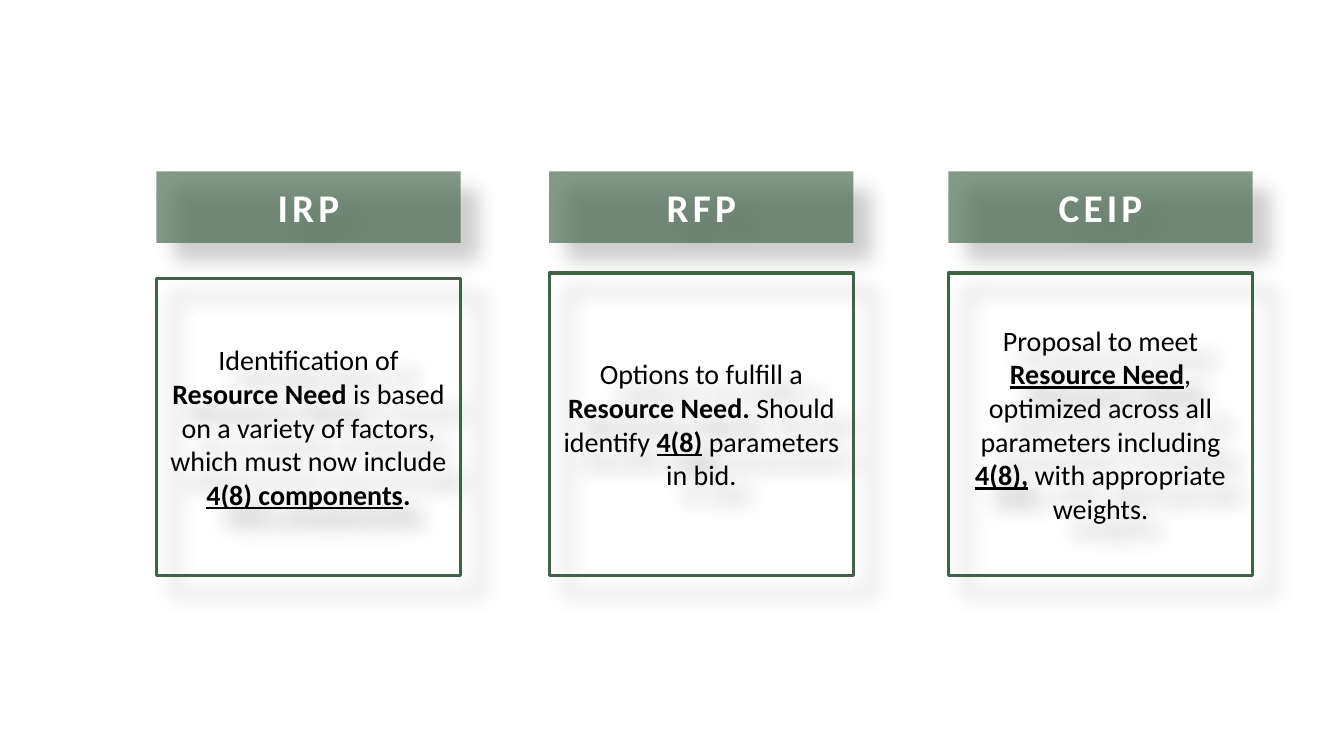
import pptx
import pptx.dml.color
import pptx.enum.shapes
import pptx.enum.text
import pptx.oxml.ns
import pptx.util
from lxml import etree
from pptx.util import Cm

GREEN = pptx.dml.color.RGBColor(0x40, 0x63, 0x47)
WHITE = pptx.dml.color.RGBColor(0xFF, 0xFF, 0xFF)
BLACK = pptx.dml.color.RGBColor(0x00, 0x00, 0x00)

FONT = "Calibri"
WIDTH = Cm(7.67)
HEADER_TOP, HEADER_HEIGHT = Cm(4.32), Cm(1.8)
BODY_BOTTOM = Cm(14.5)

# Each column: left, top of body, heading, runs of (text, style);
# style holds "b" for bold and "u" for underline
COLUMNS = [
    (Cm(3.94), Cm(7.01), "IRP", [
        ("Identification of ", ""),
        ("Resource Need", "b"),
        (" is based on a variety of factors, which must now include ", ""),
        ("4(8) components", "bu"),
        (".", "b"),
    ]),
    (Cm(13.84), Cm(6.88), "RFP", [
        ("Options to fulfill a ", ""),
        ("Resource Need. ", "b"),
        ("Should identify ", ""),
        ("4(8)", "bu"),
        (" ", "b"),
        ("parameters in bid.", ""),
    ]),
    (Cm(23.9), Cm(6.88), "CEIP", [
        ("Proposal to meet ", ""),
        ("Resource Need", "bu"),
        (", optimized across all parameters including ", ""),
        ("4(8),", "bu"),
        (" ", "b"),
        ("with appropriate weights.", ""),
    ]),
]


def add_child(parent, tag, **attrs):
    return etree.SubElement(parent, pptx.oxml.ns.qn(tag), attrs)


def set_shadow(s):
    """Soft black shadow falling to the lower right."""
    s.shadow.inherit = False
    effects = s._element.spPr.find(pptx.oxml.ns.qn("a:effectLst"))
    shadow = add_child(effects, "a:outerShdw", blurRad=str(pptx.util.Pt(15)),
                       dist=str(pptx.util.Pt(18)), dir="2700000",
                       algn="tl", rotWithShape="0")
    color = add_child(shadow, "a:srgbClr", val=str(BLACK))
    add_child(color, "a:alpha", val="30000")


def add_box(slide, left, top, height):
    s = slide.shapes.add_shape(pptx.enum.shapes.MSO_SHAPE.RECTANGLE,
                               left, top, WIDTH, height)
    tf = s.text_frame
    tf.word_wrap = True
    tf.vertical_anchor = pptx.enum.text.MSO_ANCHOR.MIDDLE
    tf.paragraphs[0].alignment = pptx.enum.text.PP_ALIGN.CENTER
    return s


def format_run(r, size, color, style):
    r.font.name = FONT
    r.font.size = pptx.util.Pt(size)
    r.font.color.rgb = color
    r.font.bold = "b" in style
    r.font.underline = "u" in style


def add_header(slide, left, heading):
    s = add_box(slide, left, HEADER_TOP, HEADER_HEIGHT)
    s.fill.solid()
    s.fill.fore_color.rgb = GREEN
    fill_color = s._element.spPr.find(".//" + pptx.oxml.ns.qn("a:srgbClr"))
    add_child(fill_color, "a:alpha", val="65000")
    s.line.fill.background()
    set_shadow(s)
    p = s.text_frame.paragraphs[0]
    p.text = heading
    r = p.runs[0]
    format_run(r, 28, WHITE, "b")
    r.font._element.set("spc", "300")


def add_body(slide, left, top, runs):
    s = add_box(slide, left, top, BODY_BOTTOM - top)
    s.fill.background()
    s.line.color.rgb = GREEN
    s.line.width = pptx.util.Pt(2.25)
    set_shadow(s)
    p = s.text_frame.paragraphs[0]
    for text, style in runs:
        r = p.add_run()
        r.text = text
        format_run(r, 20, BLACK, style)


def main():
    prs = pptx.Presentation()
    prs.slide_width, prs.slide_height = Cm(33.87), Cm(19.05)
    slide = prs.slides.add_slide(prs.slide_layouts[6])

    # Three columns, each a heading over a framed text
    for left, body_top, heading, runs in COLUMNS:
        add_header(slide, left, heading)
        add_body(slide, left, body_top, runs)

    prs.save("out.pptx")


if __name__ == "__main__":
    main()
